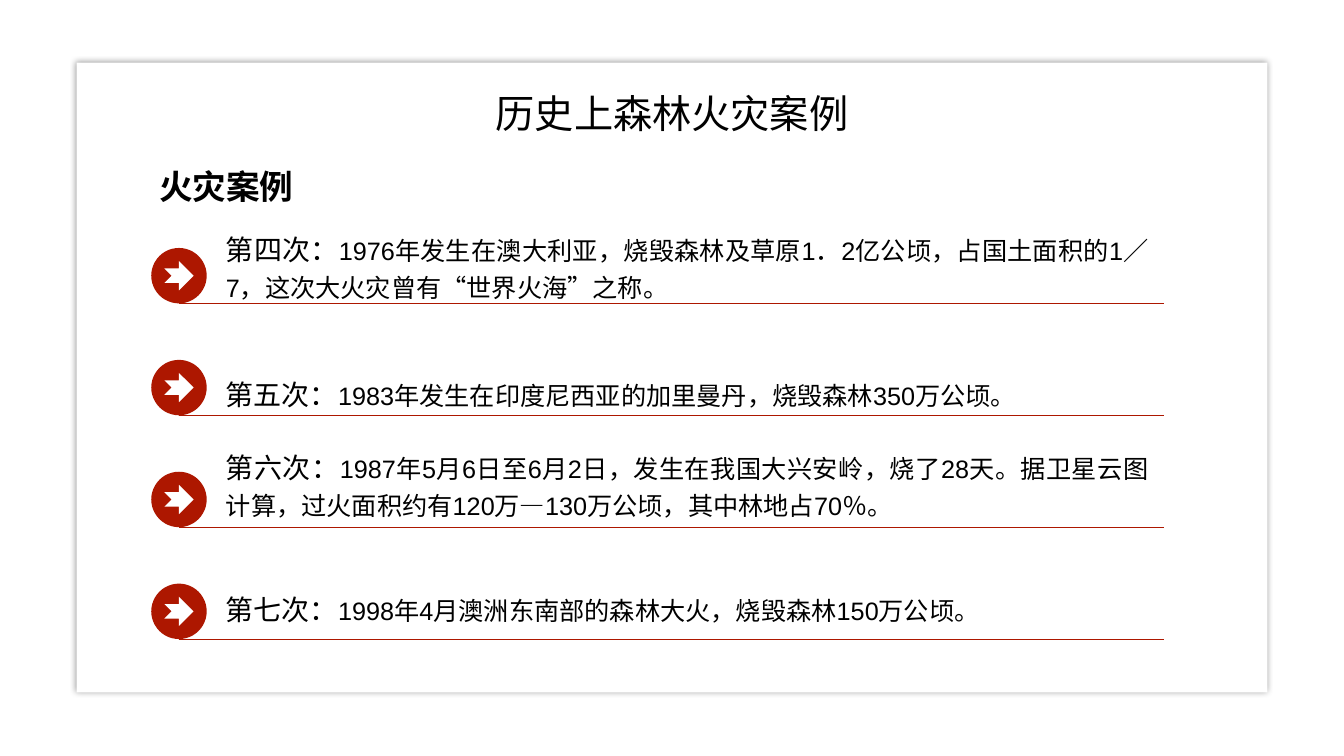
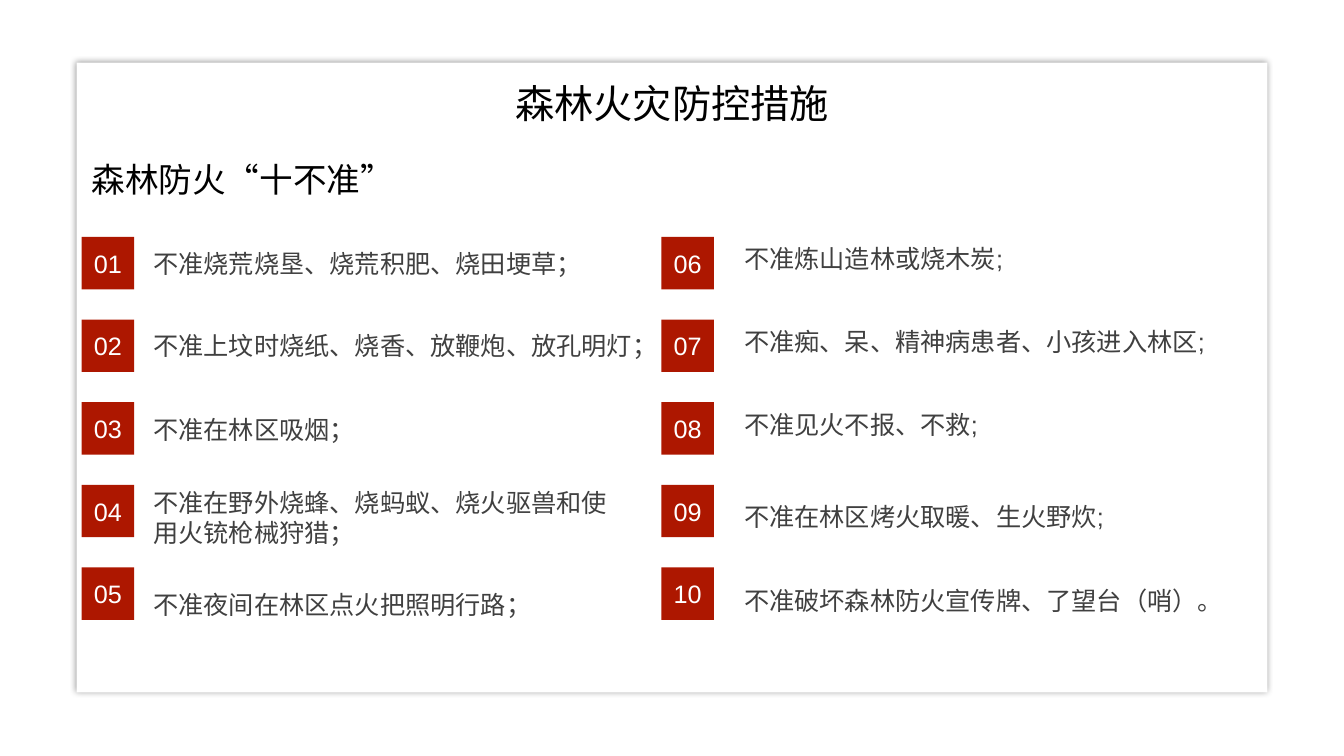
from lxml.etree import SubElement
from pptx import Presentation
from pptx.dml.color import RGBColor
from pptx.enum.lang import MSO_LANGUAGE_ID
from pptx.enum.shapes import MSO_CONNECTOR, MSO_SHAPE
from pptx.enum.text import MSO_ANCHOR, MSO_AUTO_SIZE, PP_ALIGN
from pptx.oxml.ns import qn
from pptx.util import Inches, Pt

FONT = "Arial"
RED, WHITE, BLACK, GREY = "AD1700", "FFFFFF", "000000", "404040"
SLIDE_W, SLIDE_H = 13.33, 7.5
CARD = (0.76, 0.62, 11.81, 6.25)
TITLE_W, TITLE_H = 5.45, 0.57

# label, account, text top, text height, line spacing
FIRES = [
    ("第四次：", "1976年发生在澳大利亚，烧毁森林及草原1．2亿公顷，占国土面积的1／7，"
     "这次大火灾曾有“世界火海”之称。", 2.24, 0.74, 1.2),
    ("第五次：", "1983年发生在印度尼西亚的加里曼丹，烧毁森林350万公顷。", 3.58, 0.43, 1.5),
    ("第六次：", "1987年5月6日至6月2日，发生在我国大兴安岭，烧了28天。据卫星云图计算，"
     "过火面积约有120万—130万公顷，其中林地占70％。", 4.4, 0.74, 1.2),
    ("第七次：", "1998年4月澳洲东南部的森林大火，烧毁森林150万公顷。", 5.71, 0.43, 1.5),
]
FIRE_TOP, FIRE_PITCH = 2.46, 1.11
ICON_X, ICON, ARROW = 1.5, 0.55, 0.29
RULE_END = 11.54

# badge left, text left, then (rule, text drop below the badge top, text width)
BANS = [
    (0.81, 1.52, [
        ("不准烧荒烧垦、烧荒积肥、烧田埂草；", 0.11, 4.92),
        ("不准上坟时烧纸、烧香、放鞭炮、放孔明灯；", 0.11, 4.92),
        ("不准在林区吸烟；", 0.12, 4.92),
        ("不准在野外烧蜂、烧蚂蚁、烧火驱兽和使用火铳枪械狩猎；", 0.02, 4.63),
        ("不准夜间在林区点火把照明行路；", 0.22, 4.92),
    ]),
    (6.56, 7.38, [
        ("不准炼山造林或烧木炭;", 0.06, 4.98),
        ("不准痴、呆、精神病患者、小孩进入林区;", 0.07, 4.98),
        ("不准见火不报、不救;", 0.07, 4.98),
        ("不准在林区烤火取暖、生火野炊;", 0.16, 4.98),
        ("不准破坏森林防火宣传牌、了望台（哨）。", 0.18, 4.98),
    ]),
]
BAN_TOP, BAN_PITCH, BADGE = 2.35, 0.82, 0.52


def rgb(value):
    return RGBColor.from_string(value)


def set_font(font, size, color, bold=False):
    font.name, font.size, font.bold = FONT, Pt(size), bold
    font.color.rgb = rgb(color)
    font.language_id = MSO_LANGUAGE_ID.SIMPLIFIED_CHINESE


def add_filled(shapes, preset, box, color):
    shape = shapes.add_shape(preset, *map(Inches, box))
    shape.shadow.inherit = False
    shape.fill.solid()
    shape.fill.fore_color.rgb = rgb(color)
    shape.line.fill.background()
    return shape


def add_paragraph_box(slide, box, padded=False):
    """Add a wrapping text box and return its paragraph."""
    frame = slide.shapes.add_textbox(*map(Inches, box)).text_frame
    frame.word_wrap = True
    frame.auto_size = MSO_AUTO_SIZE.SHAPE_TO_FIT_TEXT
    if not padded:
        frame.margin_left = frame.margin_right = 0
        frame.margin_top = frame.margin_bottom = 0
    return frame.paragraphs[0]


def add_card_to_layout(layout, slide):
    """Draw the shadowed card and move it behind everything in the layout."""
    card = add_filled(slide.shapes, MSO_SHAPE.RECTANGLE, CARD, WHITE)
    effects = card.element.spPr.find(qn("a:effectLst"))
    shadow = SubElement(effects, qn("a:outerShdw"), blurRad=str(Pt(5)),
                        dist="0", dir="0", algn="ctr", rotWithShape="0")
    tint = SubElement(shadow, qn("a:srgbClr"), val=BLACK)
    SubElement(tint, qn("a:alpha"), val="40000")
    card.element.nvSpPr.cNvPr.set("id", "20")
    layout.shapes.element.insert(2, card.element)


def add_headings(slide, title, title_top, subtitle, subtitle_box, bold=False):
    heading = slide.shapes.title
    heading.left, heading.top = Inches((SLIDE_W - TITLE_W) / 2), Inches(title_top)
    heading.width, heading.height = Inches(TITLE_W), Inches(TITLE_H)
    frame = heading.text_frame
    frame.text = title
    frame.word_wrap = True
    frame.vertical_anchor = MSO_ANCHOR.TOP
    frame.auto_size = MSO_AUTO_SIZE.SHAPE_TO_FIT_TEXT
    frame.paragraphs[0].alignment = PP_ALIGN.CENTER
    set_font(frame.paragraphs[0].font, 28, BLACK)

    paragraph = add_paragraph_box(slide, subtitle_box, padded=True)
    paragraph.text = subtitle
    set_font(paragraph.font, 24, BLACK, bold)


def add_fire_marker(slide, top):
    """Add a round arrow icon standing on a thin rule."""
    marker = slide.shapes.add_group_shape().shapes
    bottom = Inches(top + ICON)
    rule = marker.add_connector(MSO_CONNECTOR.STRAIGHT, Inches(ICON_X + ICON / 2),
                                bottom, Inches(RULE_END), bottom)
    rule.line.color.rgb = rgb(RED)
    rule.line.width = Pt(0.5)
    SubElement(rule.element.spPr, qn("a:effectLst"))
    add_filled(marker, MSO_SHAPE.OVAL, (ICON_X, top, ICON, ICON), RED)
    inset = (ICON - ARROW) / 2
    add_filled(marker, MSO_SHAPE.NOTCHED_RIGHT_ARROW,
               (ICON_X + inset, top + inset, ARROW, ARROW), WHITE)


def add_fires(slide):
    for row, (label, account, top, height, spacing) in enumerate(FIRES):
        paragraph = add_paragraph_box(slide, (2.24, top, 9.15, height))
        paragraph.alignment = PP_ALIGN.JUSTIFY
        paragraph.line_spacing = spacing
        for words, size in ((label, 20), (account, 18)):
            run = paragraph.add_run()
            run.text = words
            set_font(run.font, size, BLACK)
        add_fire_marker(slide, FIRE_TOP + row * FIRE_PITCH)


def add_bans(slide):
    number = 0
    for badge_x, text_x, bans in BANS:
        for row, (ban, drop, width) in enumerate(bans):
            number += 1
            top = BAN_TOP + row * BAN_PITCH
            badge = add_filled(slide.shapes, MSO_SHAPE.RECTANGLE,
                               (badge_x, top, BADGE, BADGE), RED)
            badge.text_frame.text = f"{number:02d}"
            badge.text_frame.vertical_anchor = MSO_ANCHOR.MIDDLE
            digits = badge.text_frame.paragraphs[0]
            digits.alignment = PP_ALIGN.CENTER
            set_font(digits.font, 18, WHITE)
            paragraph = add_paragraph_box(slide, (text_x, top + drop, width, 0.3))
            paragraph.text = ban
            set_font(paragraph.font, 18, GREY)


def main():
    deck = Presentation()
    deck.slide_width, deck.slide_height = Inches(SLIDE_W), Inches(SLIDE_H)
    layout = deck.slide_layouts.get_by_name("Title Only")

    cases = deck.slides.add_slide(layout)
    add_card_to_layout(layout, cases)
    add_headings(cases, "历史上森林火灾案例", 0.84,
                 "火灾案例", (1.48, 1.6, 2.78, 0.5), bold=True)
    add_fires(cases)

    measures = deck.slides.add_slide(layout)
    add_headings(measures, "森林火灾防控措施", 0.74,
                 "森林防火“十不准”", (0.81, 1.53, 3.76, 0.5))
    add_bans(measures)

    deck.save("out.pptx")


if __name__ == "__main__":
    main()
